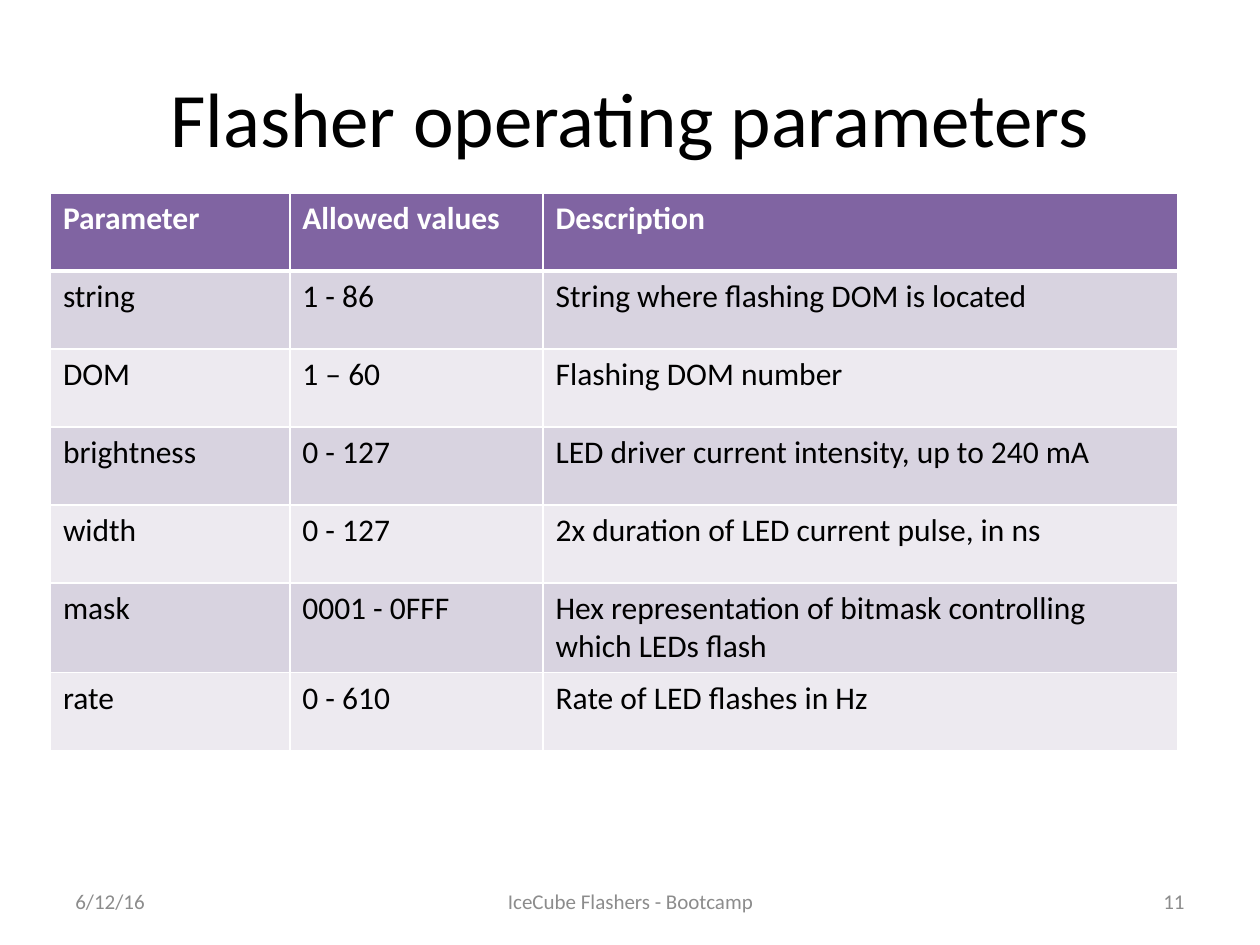
import pptx
import pptx.dml.color
import pptx.enum.text
import pptx.oxml
import pptx.oxml.ns
import pptx.util

RGBColor = pptx.dml.color.RGBColor
Inches = pptx.util.Inches
Align = pptx.enum.text.PP_ALIGN
Anchor = pptx.enum.text.MSO_ANCHOR

BLACK = RGBColor(0x00, 0x00, 0x00)
WHITE = RGBColor(0xFF, 0xFF, 0xFF)
GREY = RGBColor(0x8C, 0x8C, 0x8C)
PURPLE = RGBColor(0x80, 0x64, 0xA2)
BANDS = [RGBColor(0xD8, 0xD3, 0xE0), RGBColor(0xED, 0xEA, 0xF0)]

MARGIN = 0.5
COLUMN_WIDTHS = [1.9, 2.01, 5.04]
ROW_HEIGHT = 0.62
ROWS = [
    ("Parameter", "Allowed values", "Description"),
    ("string", "1 - 86", "String where flashing DOM is located"),
    ("DOM", "1 – 60", "Flashing DOM number"),
    ("brightness", "0 - 127", "LED driver current intensity, up to 240 mA"),
    ("width", "0 - 127", "2x duration of LED current pulse, in ns"),
    ("mask", "0001 - 0FFF", "Hex representation of bitmask controlling which LEDs flash"),
    ("rate", "0 - 610", "Rate of LED flashes in Hz"),
]


def write(text_frame, text, size, color, bold=False, align=Align.LEFT):
    text_frame.text = text
    paragraph = text_frame.paragraphs[0]
    paragraph.alignment = align
    font = paragraph.runs[0].font
    font.name = "Calibri"
    font.size = pptx.util.Pt(size)
    font.bold = bold
    font.color.rgb = color


def set_borders(cell, top, bottom):
    """Draw white cell borders: 1 pt at the sides, given widths above and below."""
    properties = cell._tc.get_or_add_tcPr()
    widths = {"lnL": 1, "lnR": 1, "lnT": top, "lnB": bottom}
    for position, (side, width) in enumerate(widths.items()):
        line = pptx.oxml.parse_xml(
            f'<a:{side} {pptx.oxml.ns.nsdecls("a")} w="{pptx.util.Pt(width)}">'
            f'<a:solidFill><a:srgbClr val="{WHITE}"/></a:solidFill></a:{side}>'
        )
        properties.insert(position, line)


presentation = pptx.Presentation()
presentation.slide_width = Inches(10)
presentation.slide_height = Inches(7.5)
slide = presentation.slides.add_slide(presentation.slide_layouts.get_by_name("Title Only"))

title = slide.shapes.title
title.left, title.top = Inches(MARGIN), Inches(0.3)
title.width, title.height = Inches(10 - 2 * MARGIN), Inches(1.25)
title.text_frame.vertical_anchor = Anchor.MIDDLE
write(title.text_frame, "Flasher operating parameters", 44, BLACK, align=Align.CENTER)

table = slide.shapes.add_table(
    len(ROWS), len(COLUMN_WIDTHS), Inches(0.4), Inches(1.53),
    Inches(sum(COLUMN_WIDTHS)), Inches(ROW_HEIGHT * len(ROWS)),
).table
for column, width in zip(table.columns, COLUMN_WIDTHS):
    column.width = Inches(width)
for row_index, texts in enumerate(ROWS):
    table.rows[row_index].height = Inches(ROW_HEIGHT)
    is_header = row_index == 0
    for column_index, text in enumerate(texts):
        cell = table.cell(row_index, column_index)
        write(cell.text_frame, text, 18, WHITE if is_header else BLACK, bold=is_header)
        cell.fill.solid()
        cell.fill.fore_color.rgb = PURPLE if is_header else BANDS[(row_index - 1) % 2]
        set_borders(cell, top=3 if row_index == 1 else 1, bottom=3 if is_header else 1)

footers = [
    ("6/12/16", MARGIN, 2.33, Align.LEFT),
    ("IceCube Flashers - Bootcamp", 3.42, 3.17, Align.CENTER),
    ("11", 7.17, 2.33, Align.RIGHT),
]
for text, left, width, align in footers:
    footer = slide.shapes.add_textbox(Inches(left), Inches(6.95), Inches(width), Inches(0.4))
    footer.text_frame.word_wrap = True
    footer.text_frame.vertical_anchor = Anchor.MIDDLE
    write(footer.text_frame, text, 12, GREY, align=align)

presentation.save("out.pptx")
